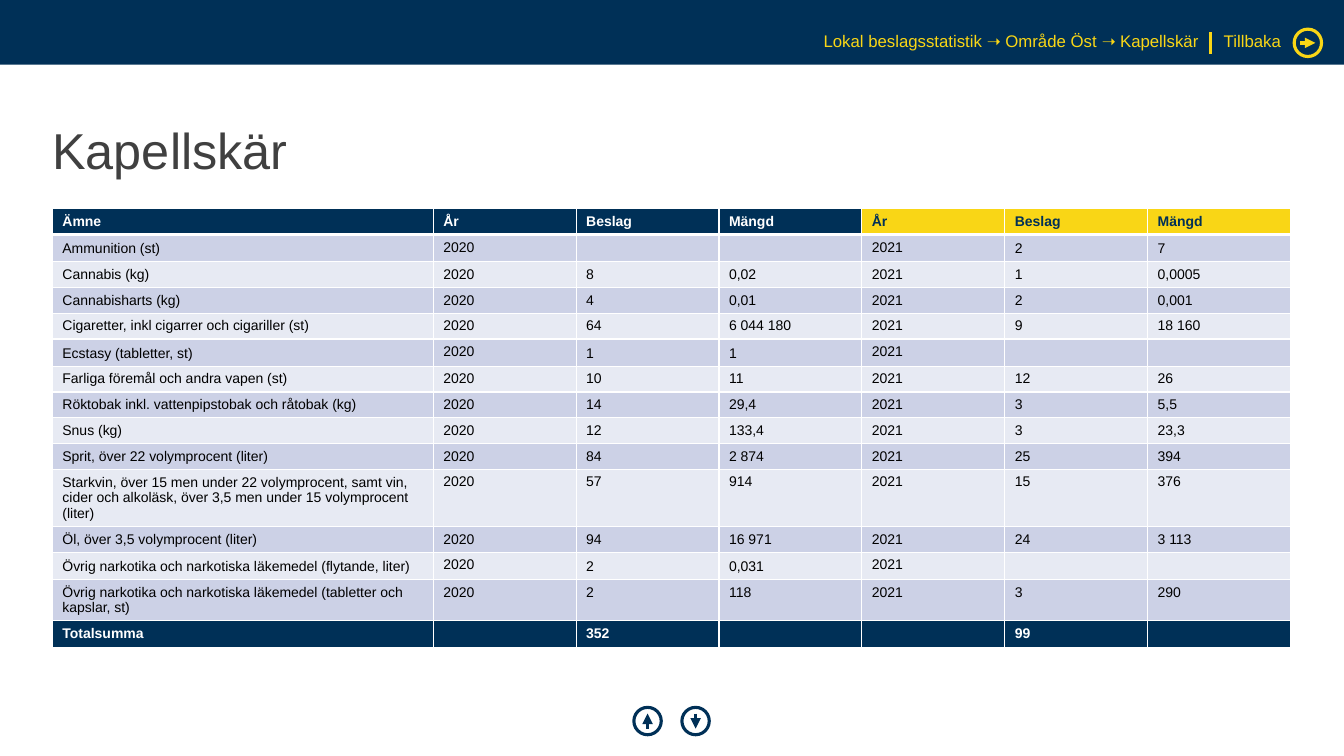
from dataclasses import dataclass

from lxml import etree
from pptx import Presentation
from pptx import util as u
from pptx.dml.color import RGBColor
from pptx.enum import shapes, text
from pptx.oxml.ns import qn

# Content
TITLE = "Kapellskär"
BREADCRUMB = "Lokal beslagsstatistik ➝ Område Öst ➝ Kapellskär"
BACK = "Tillbaka"
HEADER = ("Ämne", "År", "Beslag", "Mängd", "År", "Beslag", "Mängd")
# Substance, then seizures and amount for 2020 and for 2021
SEIZURES = [
    ("Ammunition (st)", "", "", "2", "7"),
    ("Cannabis (kg)", "8", "0,02", "1", "0,0005"),
    ("Cannabisharts (kg)", "4", "0,01", "2", "0,001"),
    ("Cigaretter, inkl cigarrer och cigariller (st)", "64", "6 044 180", "9", "18 160"),
    ("Ecstasy (tabletter, st)", "1", "1", "", ""),
    ("Farliga föremål och andra vapen (st)", "10", "11", "12", "26"),
    ("Röktobak inkl. vattenpipstobak och råtobak (kg)", "14", "29,4", "3", "5,5"),
    ("Snus (kg)", "12", "133,4", "3", "23,3"),
    ("Sprit, över 22 volymprocent (liter)", "84", "2 874", "25", "394"),
    ("Starkvin, över 15 men under 22 volymprocent, samt vin, cider och alkoläsk, "
     "över 3,5 men under 15 volymprocent (liter)", "57", "914", "15", "376"),
    ("Öl, över 3,5 volymprocent (liter)", "94", "16 971", "24", "3 113"),
    ("Övrig narkotika och narkotiska läkemedel (flytande, liter)", "2", "0,031", "", ""),
    ("Övrig narkotika och narkotiska läkemedel (tabletter och kapslar, st)",
     "2", "118", "3", "290"),
]
TOTAL = ("Totalsumma", "", "352", "", "", "99", "")
ROW_HEIGHT = 0.65
TALL_ROWS = {10: 1.44, 13: 1.04}  # rows whose substance wraps
YEAR_COLUMNS = (1, 4)
COLUMN_WIDTHS = [9.6] + [3.6] * 6


@dataclass(frozen=True)
class Theme:
    font: str = "Arial"
    navy: str = "003057"
    yellow: str = "F9D616"
    title: str = "404040"
    ink: str = "000000"
    white: str = "FFFFFF"
    band_dark: str = "CCD1E6"
    band_light: str = "E7EAF3"
    title_size: float = 36
    nav_size: float = 12
    table_size: float = 10
    ring_width: float = 2.25
    arrow_width: float = 2.5


THEME = Theme()


def color(code):
    return RGBColor.from_string(code)


def format_para(para, size, code, bold=False):
    for span in para.runs:
        span.font.name = THEME.font
        span.font.size = u.Pt(size)
        span.font.bold = bold
        span.font.color.rgb = color(code)


def place(shape, left, top, width, height):
    shape.left, shape.top = u.Cm(left), u.Cm(top)
    shape.width, shape.height = u.Cm(width), u.Cm(height)


def fill_text(box, words, size, code, align=text.PP_ALIGN.LEFT,
              anchor=text.MSO_ANCHOR.TOP):
    frame = box.text_frame
    frame.text = words
    frame.word_wrap = True
    frame.auto_size = text.MSO_AUTO_SIZE.NONE
    frame.vertical_anchor = anchor
    frame.margin_left = frame.margin_right = frame.margin_top = frame.margin_bottom = 0
    para = frame.paragraphs[0]
    para.alignment = align
    para.line_spacing = 0.9
    format_para(para, size, code)


def add_nav_text(page, words, left, width, align):
    box = page.shapes.add_textbox(u.Cm(left), u.Cm(0.84), u.Cm(width), u.Cm(0.48))
    fill_text(box, words, THEME.nav_size, THEME.yellow, align)


def add_line(page, x1, y1, x2, y2, code, width, arrow=False):
    line = page.shapes.add_connector(
        shapes.MSO_CONNECTOR.STRAIGHT, u.Cm(x1), u.Cm(y1), u.Cm(x2), u.Cm(y2))
    line.line.color.rgb = color(code)
    line.line.width = u.Pt(width)
    if arrow:
        etree.SubElement(line.line._get_or_add_ln(), qn("a:tailEnd"), type="triangle")
    etree.SubElement(line._element.spPr, qn("a:effectLst"))


def add_arrow_button(page, x, y, dx, dy, code):
    """Ring centred on (x, y) with an arrow pointing along (dx, dy)."""
    reach, size = 0.19, 0.69
    add_line(page, x - dx * reach, y - dy * reach, x + dx * reach, y + dy * reach,
             code, THEME.arrow_width, arrow=True)
    ring = page.shapes.add_shape(
        shapes.MSO_SHAPE.OVAL, u.Cm(x - size / 2), u.Cm(y - size / 2),
        u.Cm(size), u.Cm(size))
    ring.shadow.inherit = False
    ring.fill.background()
    ring.line.color.rgb = color(code)
    ring.line.width = u.Pt(THEME.ring_width)


def style_cell(cell, words, fill, code, bold, bottom_width):
    cell.text = words
    para = cell.text_frame.paragraphs[0]
    format_para(para, THEME.table_size, code, bold)
    if not words:
        etree.SubElement(para._p, qn("a:endParaRPr"), sz=str(int(THEME.table_size * 100)))
    # Borders come before the fill in the cell properties
    props = cell._tc.get_or_add_tcPr()
    for side, width in (("L", 1), ("R", 1), ("T", 1), ("B", bottom_width)):
        border = etree.SubElement(props, qn(f"a:ln{side}"), w=str(u.Pt(width)))
        solid = etree.SubElement(border, qn("a:solidFill"))
        etree.SubElement(solid, qn("a:srgbClr"), val=THEME.white)
    cell.fill.solid()
    cell.fill.fore_color.rgb = color(fill)


def add_seizure_table(page):
    body = [(name, "2020", n20, m20, "2021", n21, m21)
            for name, n20, m20, n21, m21 in SEIZURES]
    rows = [HEADER, *body, TOTAL]
    last = len(rows) - 1
    heights = [TALL_ROWS.get(r, ROW_HEIGHT) for r in range(len(rows))]
    table = page.shapes.add_table(
        len(rows), len(HEADER), u.Cm(1.32), u.Cm(5.26),
        u.Cm(sum(COLUMN_WIDTHS)), u.Cm(sum(heights))).table
    for column, width in zip(table.columns, COLUMN_WIDTHS):
        column.width = u.Cm(width)
    for r, words in enumerate(rows):
        table.rows[r].height = u.Cm(heights[r])
        for c, word in enumerate(words):
            cell = table.cell(r, c)
            if r == 0 and c >= YEAR_COLUMNS[1]:
                fill, ink = THEME.yellow, THEME.navy
            elif r in (0, last):
                fill, ink = THEME.navy, THEME.white
            else:
                fill, ink = (THEME.band_dark if r % 2 else THEME.band_light), THEME.ink
            style_cell(cell, word, fill, ink, r in (0, last), 3 if r == 0 else 1)
            if 0 < r < last and c not in YEAR_COLUMNS and (c == 0 or r not in TALL_ROWS):
                cell.vertical_anchor = text.MSO_ANCHOR.BOTTOM


def main():
    deck = Presentation()
    deck.slide_width, deck.slide_height = u.Cm(33.87), u.Cm(19.05)
    page = deck.slides.add_slide(deck.slide_layouts[5])

    # Title
    title = page.shapes.title
    place(title, 1.32, 2.01, 31.2, 3.68)
    fill_text(title, TITLE, THEME.title_size, THEME.title,
              anchor=text.MSO_ANCHOR.MIDDLE)

    # Top bar with navigation
    bar = page.shapes.add_shape(
        shapes.MSO_SHAPE.RECTANGLE, 0, 0, deck.slide_width, u.Cm(1.63))
    bar.shadow.inherit = False
    bar.fill.solid()
    bar.fill.fore_color.rgb = color(THEME.navy)
    bar.line.fill.background()
    add_nav_text(page, BREADCRUMB, 13.97, 16.25, text.PP_ALIGN.RIGHT)
    add_line(page, 30.51, 0.81, 30.51, 1.37, THEME.yellow, THEME.ring_width)
    add_nav_text(page, BACK, 30.84, 1.7, text.PP_ALIGN.LEFT)
    add_arrow_button(page, 32.96, 1.08, 1, 0, THEME.yellow)

    # Seizures per substance
    add_seizure_table(page)

    # Previous and next buttons
    for x, direction in ((16.32, -1), (17.53, 1)):
        add_arrow_button(page, x, 18.17, 0, direction, THEME.navy)

    deck.save("out.pptx")


if __name__ == "__main__":
    main()
